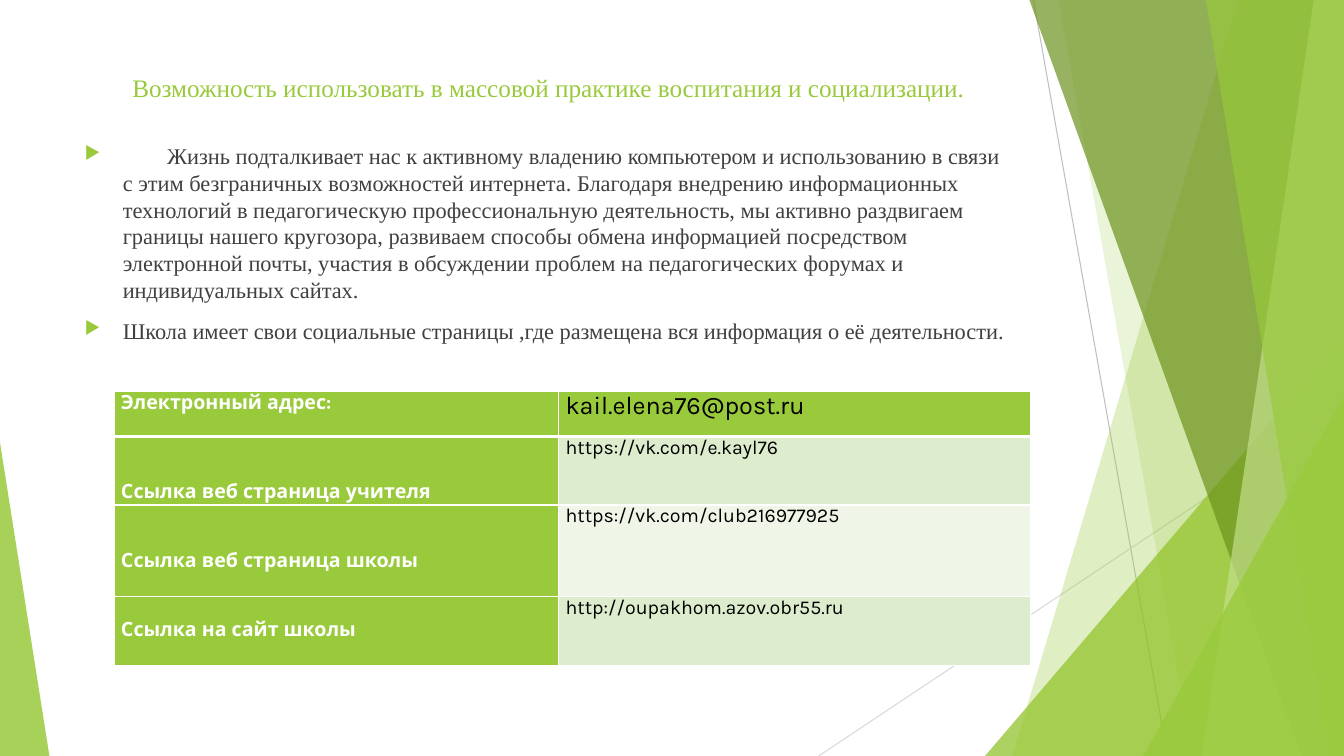
from lxml.etree import SubElement
from pptx import Presentation
from pptx.dml.color import RGBColor
from pptx.enum.shapes import MSO_CONNECTOR as Connector, MSO_SHAPE as Shape
from pptx.enum.text import PP_ALIGN as Align
from pptx.oxml.ns import qn
from pptx.util import Inches, Pt

LIME = RGBColor(0x99, 0xCA, 0x3C)
GREEN = RGBColor(0x90, 0xC2, 0x26)
OLIVE = RGBColor(0x6C, 0x92, 0x1D)
PALE = RGBColor(0xC2, 0xDF, 0x8A)
BAND_DARK = RGBColor(0xDE, 0xEC, 0xCE)
BAND_LIGHT = RGBColor(0xEF, 0xF6, 0xE8)
GRAY = RGBColor(0xBF, 0xBF, 0xBF)
SILVER = RGBColor(0xD9, 0xD9, 0xD9)
TEXT = RGBColor(0x40, 0x40, 0x40)
BLACK = RGBColor(0, 0, 0)
WHITE = RGBColor(0xFF, 0xFF, 0xFF)

SERIF = "Times New Roman"
SANS = "Karla"
WIDTH, HEIGHT = 13.33, 7.5
LINE_HEIGHT = 0.22

TITLE = "Возможность использовать в массовой практике воспитания и социализации."
BODY = [
    "\tЖизнь подталкивает нас к активному владению компьютером и использованию в связи "
    "с этим безграничных возможностей интернета. Благодаря внедрению информационных "
    "технологий в педагогическую профессиональную деятельность, мы активно раздвигаем "
    "границы нашего кругозора, развиваем способы обмена информацией посредством "
    "электронной почты, участия в обсуждении проблем на педагогических форумах и "
    "индивидуальных сайтах.",
    "Школа имеет свои социальные страницы ,где размещена вся информация о её деятельности.",
]
COLUMNS = [4.41, 4.68]
CONTACTS = [
    ("Электронный адрес:", "kail.elena76@post.ru", 0.45, 0, 18, LIME),
    ("Ссылка веб страница учителя", "https://vk.com/e.kayl76", 0.68, 2, 14, BAND_DARK),
    ("Ссылка веб страница школы", "https://vk.com/club216977925", 0.91, 2, 14, BAND_LIGHT),
    ("Ссылка на сайт школы", "http://oupakhom.azov.obr55.ru", 0.68, 1, 14, BAND_DARK),
]


def write(para, text, font=SERIF, size=16, color=TEXT, bold=False, align=Align.LEFT):
    """Put formatted text into a paragraph."""
    para.alignment = align
    span = para.add_run()
    span.text = text
    span.font.name = font
    span.font.size = Pt(size)
    span.font.color.rgb = color
    span.font.bold = bold


class Painter:
    """Draws styled elements on the current slide."""

    def __init__(self, page):
        """Remember the slide to draw on."""
        self.page = page

    def line(self, start, end, color):
        """Draw a thin straight line."""
        line = self.page.shapes.add_connector(
            Connector.STRAIGHT, *(Inches(v) for v in (*start, *end)))
        line.line.color.rgb = color
        line.line.width = Pt(0.75)
        SubElement(line._element.spPr, qn("a:effectLst"))

    def paint(self, shape, color, opacity):
        """Give a shape a translucent fill and no outline."""
        shape.shadow.inherit = False
        shape.line.fill.background()
        shape.fill.solid()
        shape.fill.fore_color.rgb = color
        tint = shape._element.spPr.find(qn("a:solidFill"))[0]
        SubElement(tint, qn("a:alpha"), val=str(opacity * 1000))

    def facet(self, top_left, bottom_left, color, opacity):
        """Draw a slanted panel that reaches the right edge."""
        builder = self.page.shapes.build_freeform(
            Inches(top_left), 0, scale=1.0)
        corners = [(WIDTH, 0), (WIDTH, HEIGHT), (bottom_left, HEIGHT)]
        builder.add_line_segments(
            [(Inches(x), Inches(y)) for x, y in corners], close=True)
        self.paint(builder.convert_to_shape(), color, opacity)

    def triangle(self, left, top, width, apex, color, opacity):
        """Draw a triangle that stands on the bottom edge."""
        shape = self.page.shapes.add_shape(
            Shape.ISOSCELES_TRIANGLE, Inches(left), Inches(top),
            Inches(width), Inches(HEIGHT - top))
        shape.adjustments[0] = apex
        self.paint(shape, color, opacity)

    def text_frame(self, left, top, width, height):
        """Add a wrapping text box and return its frame."""
        box = self.page.shapes.add_textbox(
            Inches(left), Inches(top), Inches(width), Inches(height))
        box.text_frame.word_wrap = True
        return box.text_frame

    def title(self, text):
        """Add the centred heading."""
        frame = self.text_frame(0.74, 0.67, 9.4, 0.7)
        write(frame.paragraphs[0], text, size=18, color=LIME, align=Align.CENTER)

    def bullets(self, items):
        """Add the bulleted body text."""
        frame = self.text_frame(0.74, 1.36, 9.4, 2.3)
        for index, item in enumerate(items):
            para = frame.add_paragraph() if index else frame.paragraphs[0]
            props = para._p.get_or_add_pPr()
            props.set("marL", str(Inches(0.38)))
            props.set("indent", str(Inches(-0.38)))
            tint = SubElement(props, qn("a:buClr"))
            SubElement(tint, qn("a:srgbClr"), val=str(LIME))
            SubElement(props, qn("a:buSzPct"), val="80000")
            SubElement(props, qn("a:buChar"), char="▶")
            tabs = SubElement(props, qn("a:tabLst"))
            SubElement(tabs, qn("a:tab"), pos=str(Inches(0.82)), algn="l")
            if index:
                para.space_before = Pt(10)
            write(para, item)

    def cell(self, cell, text, fill, blank_lines=0, bottom=1, **style):
        """Fill one table cell with text, colour and white borders."""
        cell.margin_left = cell.margin_right = Inches(0.07)
        cell.margin_top = Inches(LINE_HEIGHT * blank_lines)
        cell.margin_bottom = 0
        props = cell._tc.get_or_add_tcPr()
        for side, width in (("lnL", 1), ("lnR", 1), ("lnT", 1), ("lnB", bottom)):
            edge = SubElement(props, qn(f"a:{side}"), w=str(Pt(width)))
            paint = SubElement(edge, qn("a:solidFill"))
            SubElement(paint, qn("a:srgbClr"), val=str(WHITE))
        cell.fill.solid()
        cell.fill.fore_color.rgb = fill
        write(cell.text_frame.paragraphs[0], text, font=SANS, **style)

    def table(self, rows):
        """Add the table of contacts."""
        table = self.page.shapes.add_table(
            len(rows), len(COLUMNS), Inches(1.13), Inches(3.88),
            Inches(sum(COLUMNS)), Inches(sum(row[2] for row in rows))).table
        for column, width in zip(table.columns, COLUMNS):
            column.width = Inches(width)
        for index, (label, address, height, blank_lines, size, band) in enumerate(rows):
            table.rows[index].height = Inches(height)
            bottom = 1 if index else 3
            self.cell(table.cell(index, 0), label, LIME, blank_lines, bottom,
                      size=14, color=WHITE, bold=True)
            self.cell(table.cell(index, 1), address, band, bottom=bottom,
                      size=size, color=BLACK)


def main():
    """Build the slide and save it."""
    deck = Presentation()
    deck.slide_width = Inches(WIDTH)
    deck.slide_height = Inches(HEIGHT)
    painter = Painter(deck.slides.add_slide(deck.slide_layouts[6]))
    painter.line((10.25, 0), (11.58, HEIGHT), GRAY)
    painter.line((WIDTH, 4.03), (8.12, HEIGHT), SILVER)
    painter.facet(12.28, 10.04, LIME, 30)
    painter.facet(10.5, 11.83, LIME, 20)
    painter.triangle(9.77, 3.33, 3.56, 1, GREEN, 72)
    painter.facet(10.21, 12.91, OLIVE, 70)
    painter.facet(13.03, 11.92, PALE, 70)
    painter.facet(11.96, 13.18, LIME, 65)
    painter.triangle(11.34, 3.93, 1.99, 1, LIME, 80)
    painter.triangle(0, 4.39, 0.49, 0, LIME, 85)
    painter.title(TITLE)
    painter.bullets(BODY)
    painter.table(CONTACTS)
    deck.save("out.pptx")


if __name__ == "__main__":
    main()
